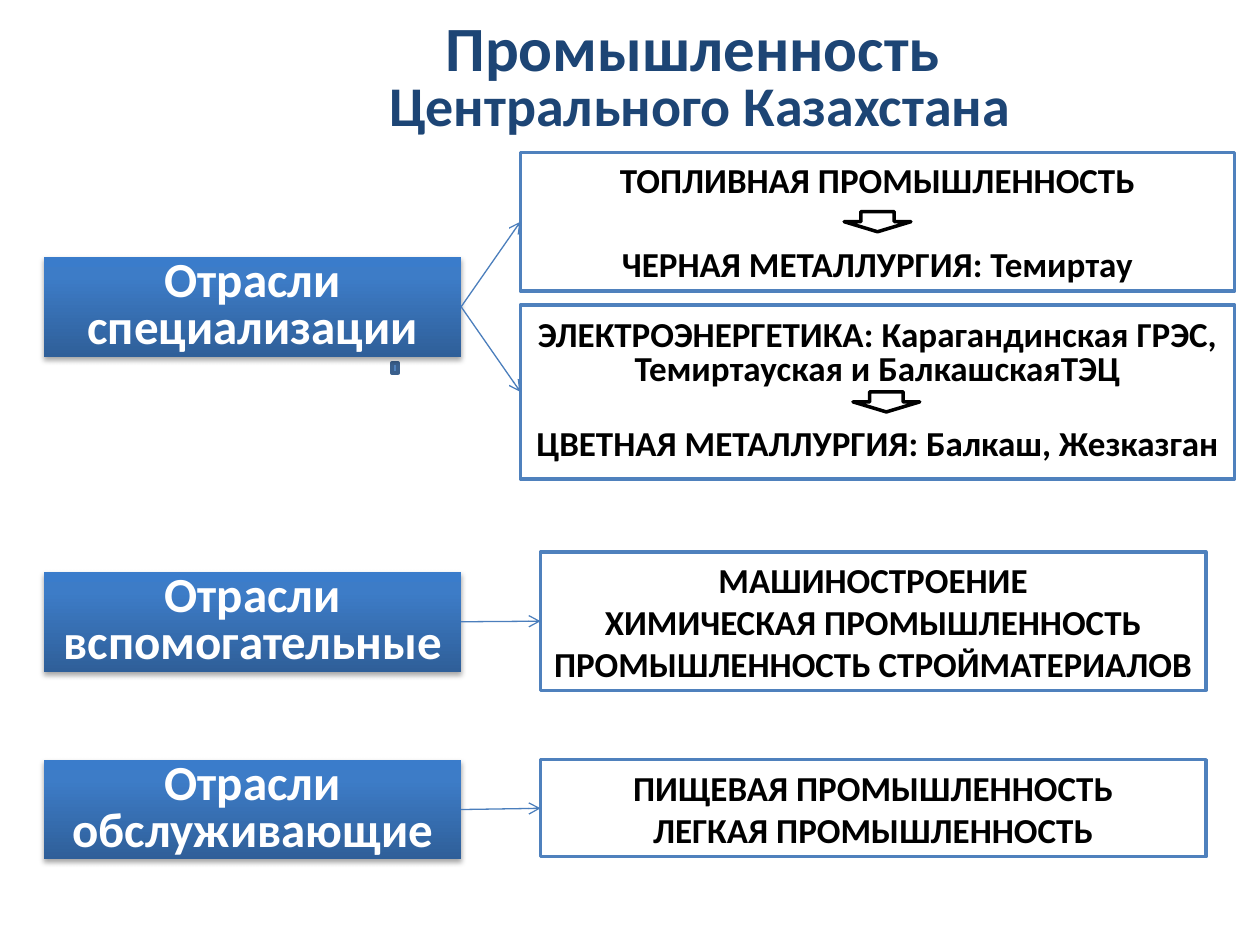
from copy import deepcopy

from lxml.etree import SubElement
from pptx import Presentation
from pptx.dml.color import RGBColor
from pptx.enum.shapes import MSO_CONNECTOR as Link, MSO_SHAPE as Shape
from pptx.enum.text import MSO_ANCHOR as Anchor, PP_ALIGN as Align
from pptx.oxml.ns import qn
from pptx.util import Inches, Pt

WHITE = RGBColor(0xFF, 0xFF, 0xFF)
BLACK = RGBColor(0x00, 0x00, 0x00)
NAVY = RGBColor(0x1D, 0x45, 0x75)
BLUE = RGBColor(0x4F, 0x81, 0xBD)
EDGE = RGBColor(0x3A, 0x5F, 0x8C)
ARROW = RGBColor(0x4B, 0x7E, 0xBC)
GRADIENT = [(0, RGBColor(0x2F, 0x5F, 0x99)), (0.8, RGBColor(0x3D, 0x7C, 0xC7)),
            (1, RGBColor(0x3A, 0x7C, 0xCB))]

WIDTH, HEIGHT = Inches(10), Inches(7.5)
COLUMNS, ROWS = 100, 75
LABEL_LEFT, LABEL_WIDTH, LABEL_HEIGHT = 3.5, 33.1, 7.9

BRANCHES = [
    ("Отрасли специализации", 20.4, [
        ((41.3, 24.2, 56.7, 13.8), [
            ("ЭЛЕКТРОЭНЕРГЕТИКА: Карагандинская ГРЭС, Темиртауская и БалкашскаяТЭЦ", 0.8, 0),
            ("ЦВЕТНАЯ МЕТАЛЛУРГИЯ: Балкаш, Жезказган", 1, 19)]),
        ((41.3, 12.1, 56.7, 11), [
            ("ТОПЛИВНАЯ ПРОМЫШЛЕННОСТЬ", 1, 0),
            ("ЧЕРНАЯ МЕТАЛЛУРГИЯ: Темиртау", 1, 24)])]),
    ("Отрасли вспомогательные", 45.4, [
        ((42.9, 43.8, 52.8, 11), [
            ("МАШИНОСТРОЕНИЕ", 1, 0),
            ("ХИМИЧЕСКАЯ ПРОМЫШЛЕННОСТЬ", 1, 0),
            ("ПРОМЫШЛЕННОСТЬ СТРОЙМАТЕРИАЛОВ", 1, 0)])]),
    ("Отрасли обслуживающие", 60.3, [
        ((42.9, 60.3, 52.8, 7.7), [
            ("ПИЩЕВАЯ ПРОМЫШЛЕННОСТЬ", 1, 0),
            ("ЛЕГКАЯ ПРОМЫШЛЕННОСТЬ", 1, 0)])]),
]
DOWN_ARROWS = [(67, 16.8, 5.3, 1.6), (67.7, 31.1, 5.3, 1.6)]
MARKER = (31.1, 28.8, 0.5, 0.8)


def place(box):
    """Turn a box in grid cells into slide lengths."""
    left, top, width, height = box
    column, row = WIDTH / COLUMNS, HEIGHT / ROWS
    return [round(n) for n in (left * column, top * row, width * column, height * row)]


def style_font(font, size, color):
    """Apply the bold text format."""
    for key, value in {"name": "Calibri", "size": Pt(size), "bold": True}.items():
        setattr(font, key, value)
    font.color.rgb = color


def write(frame, lines, size, color):
    """Fill a frame with centred paragraphs of text, line spacing and gap."""
    margins = dict.fromkeys(("margin_left", "margin_right", "margin_top", "margin_bottom"), Inches(0.05))
    for key, value in {**margins, "word_wrap": True, "vertical_anchor": Anchor.MIDDLE}.items():
        setattr(frame, key, value)
    for index, (text, spacing, gap) in enumerate(lines):
        paragraph = frame.add_paragraph() if index else frame.paragraphs[0]
        paragraph.alignment, paragraph.line_spacing = Align.CENTER, spacing
        if gap:
            paragraph.space_before = Pt(gap)
        run = paragraph.add_run()
        run.text = text
        style_font(run.font, size, color)


def add_outlined(slide, kind, box, fill, line):
    """Add a flat shape with a two-point outline."""
    shape = slide.shapes.add_shape(kind, *place(box))
    shape.shadow.inherit = False
    shape.fill.solid()
    shape.fill.fore_color.rgb = fill
    shape.line.color.rgb = line
    shape.line.width = Pt(2)
    return shape


def add_label(slide, box, text):
    """Add a gradient label with a soft shadow below it."""
    label = slide.shapes.add_shape(Shape.RECTANGLE, *place(box))
    label.fill.gradient()
    label.fill.gradient_angle = 90
    stop_list = label._element.spPr.find(".//" + qn("a:gsLst"))
    stop_list.append(deepcopy(stop_list[-1]))
    for stop, (position, color) in zip(label.fill.gradient_stops, GRADIENT):
        stop.position, stop.color.rgb = position, color
    label.line.fill.background()
    label.shadow.inherit = False
    effects = label._element.spPr.find(qn("a:effectLst"))
    shadow = SubElement(effects, qn("a:outerShdw"), blurRad=str(Pt(3.1)),
                        dist=str(Pt(1.8)), dir="5400000", rotWithShape="0")
    tint = SubElement(shadow, qn("a:srgbClr"), val=str(BLACK))
    SubElement(tint, qn("a:alpha"), val="35000")
    write(label.text_frame, [(text, 0.8, 0)], 28, WHITE)
    return label


def add_link(slide, label, industries):
    """Join a label's right side to the left side of its industries."""
    link = slide.shapes.add_connector(Link.STRAIGHT, 0, 0, 0, 0)
    link.begin_connect(label, 3)
    link.end_connect(industries, 1)
    link.line.color.rgb = ARROW
    link.line.width = Pt(0.75)
    SubElement(link.line._get_or_add_ln(), qn("a:tailEnd"), type="arrow")
    SubElement(link._element.spPr, qn("a:effectLst"))


def add_branch(slide, text, top, groups):
    """Add a label with its linked industry boxes."""
    label = add_label(slide, (LABEL_LEFT, top, LABEL_WIDTH, LABEL_HEIGHT), text)
    for box, lines in groups:
        industries = add_outlined(slide, Shape.RECTANGLE, box, WHITE, BLUE)
        write(industries.text_frame, lines, 20, BLACK)
        add_link(slide, label, industries)


def add_title(slide, box):
    """Place the two-line heading in the title placeholder."""
    title = slide.shapes.title
    title.left, title.top, title.width, title.height = place(box)
    write(title.text_frame, [("Промышленность ", 0.8, 0)], 36, NAVY)
    heading = title.text_frame.paragraphs[0]
    heading.add_line_break()
    region = heading.add_run()
    region.text = "Центрального Казахстана"
    style_font(region.font, 32, NAVY)


def main():
    """Build and save the slide."""
    deck = Presentation()
    deck.slide_width, deck.slide_height = WIDTH, HEIGHT
    slide = deck.slides.add_slide(deck.slide_layouts[5])
    add_title(slide, (13.8, 2.1, 83.5, 8.5))
    add_outlined(slide, Shape.RECTANGLE, MARKER, BLUE, EDGE)
    for text, top, groups in BRANCHES:
        add_branch(slide, text, top, groups)
    for box in DOWN_ARROWS:
        add_outlined(slide, Shape.DOWN_ARROW, box, WHITE, BLACK)
    deck.save("out.pptx")


if __name__ == "__main__":
    main()
